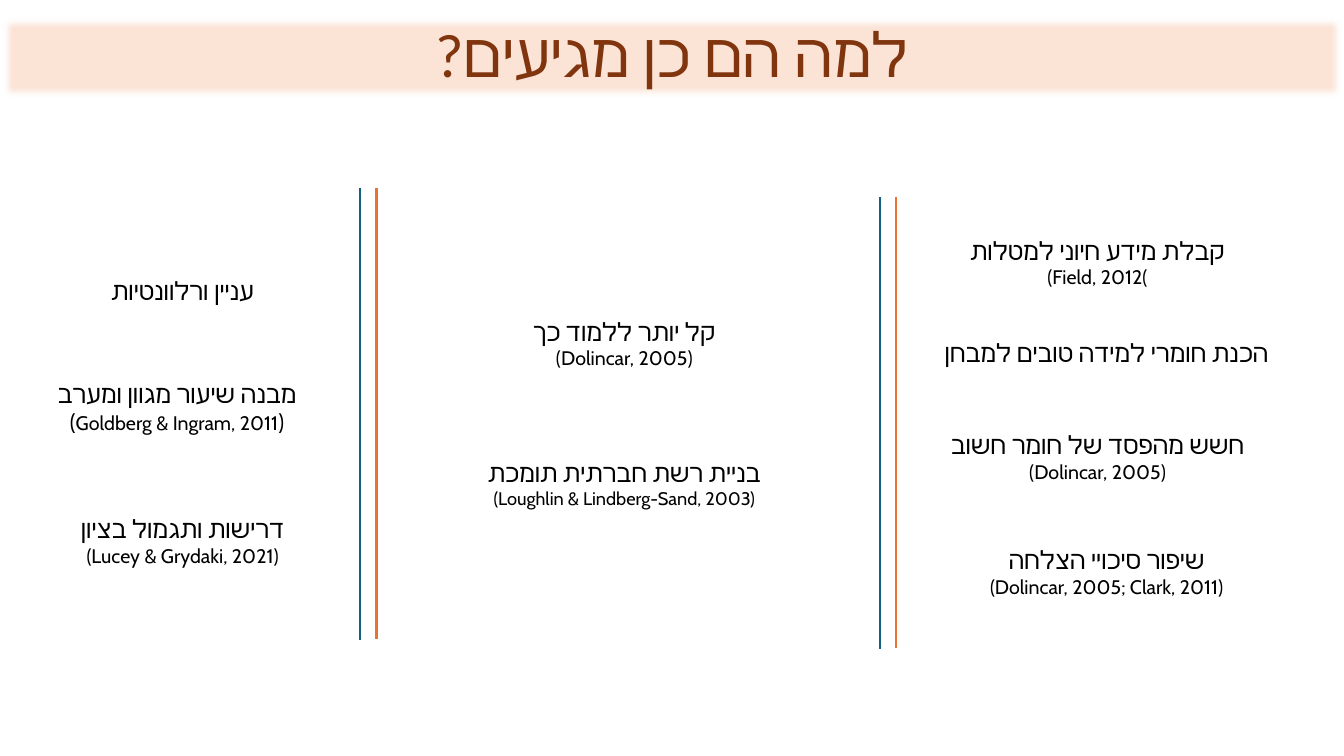
from lxml import etree
from pptx import Presentation
from pptx.dml.color import RGBColor
from pptx.enum.shapes import MSO_CONNECTOR, MSO_SHAPE
from pptx.enum.text import MSO_ANCHOR, PP_ALIGN
from pptx.oxml.ns import qn
from pptx.util import Pt

STRAIGHT = MSO_CONNECTOR.STRAIGHT
OVAL, RECTANGLE = MSO_SHAPE.OVAL, MSO_SHAPE.RECTANGLE
MIDDLE, CENTER = MSO_ANCHOR.MIDDLE, PP_ALIGN.CENTER

PEACH = RGBColor(0xFB, 0xE3, 0xD6)
BROWN = RGBColor(0x80, 0x35, 0x0E)
BLACK = RGBColor(0x00, 0x00, 0x00)
ORANGE = RGBColor(0xE9, 0x71, 0x32)
BLUE = RGBColor(0x15, 0x60, 0x82)

REASON_HEIGHT = 113
REASON_SIZE = 18
CITATION_SIZE = 14

# Each reason: horizontal shift from the column's centre, top, width,
# right-to-left flag, then one list of (text, size) runs per line
RIGHT_REASONS = [
    (0, 0, 304, False, [[("קבלת מידע חיוני למטלות", REASON_SIZE)],
                        [("(Field, 2012(", CITATION_SIZE)]]),
    (6.5, 65, 354, False, [[("הכנת חומרי למידה טובים למבחן", REASON_SIZE)]]),
    (0, 139, 333, True, [[("חשש מהפסד של חומר חשוב", REASON_SIZE)],
                         [("(Dolincar, 2005)", CITATION_SIZE)]]),
    (6.5, 221, 304, False, [[("שיפור סיכויי הצלחה", REASON_SIZE)],
                            [("(Dolincar, 2005; Clark, 2011)", CITATION_SIZE)]]),
]
MIDDLE_REASONS = [
    (0, 0, 354, True, [[("קל יותר ללמוד כך", REASON_SIZE)],
                       [("(Dolincar, 2005)", CITATION_SIZE)]]),
    (0, 100, 304, False, [[("בניית רשת חברתית תומכת", REASON_SIZE)],
                          [("(Loughlin & Lindberg-Sand, 2003)", 13)]]),
]
LEFT_REASONS = [
    (0, 0, 304, False, [[("עניין ורלוונטיות", REASON_SIZE)]]),
    (-4, 83, 304, False, [[("מבנה שיעור מגוון ומערב", REASON_SIZE)],
                          [("(", 16), ("Goldberg & Ingram, 2011", CITATION_SIZE),
                           (")", 16)]]),
    (0, 178.5, 304, False, [[("דרישות ותגמול בציון", REASON_SIZE)],
                            [("(Lucey & Grydaki, 2021)", CITATION_SIZE)]]),
]


def apply_format(target, values):
    for name, value in values.items():
        setattr(target, name, value)


def write_lines(shape, lines, font_name, color, rtl):
    """Write centred lines of runs into a shape."""
    frame = shape.text_frame
    apply_format(frame, {"word_wrap": False, "vertical_anchor": MIDDLE})
    for index, runs in enumerate(lines):
        paragraph = frame.add_paragraph() if index else frame.paragraphs[0]
        paragraph.alignment = CENTER
        if rtl:
            paragraph._p.get_or_add_pPr().set("rtl", "1")
        for text, size in runs:
            run = paragraph.add_run()
            run.text = text
            apply_format(run.font, {"name": font_name, "size": Pt(size)})
            run.font.color.rgb = color
            script_font = etree.SubElement(run.font._element, qn("a:cs"))
            script_font.set("typeface", font_name)


def add_title(slide, box, text):
    """Title on a band with soft edges."""
    band = slide.shapes.add_shape(RECTANGLE, *map(Pt, box))
    band.shadow.inherit = False
    band.fill.solid()
    band.fill.fore_color.rgb = PEACH
    band.line.fill.background()
    effects = band._element.spPr.find(qn("a:effectLst"))
    etree.SubElement(effects, qn("a:softEdge")).set("rad", str(Pt(5)))
    write_lines(band, [[(text, 44)]], "Calibri", BROWN, True)
    band.text_frame.paragraphs[0].line_spacing = 0.9


def add_column(slide, box, reasons):
    """Reasons centred on the column, each in an unfilled oval."""
    left, top, width = box
    for shift, offset, oval_width, rtl, lines in reasons:
        oval_left = left + (width - oval_width) / 2 + shift
        oval = slide.shapes.add_shape(OVAL, Pt(oval_left), Pt(top + offset),
                                      Pt(oval_width), Pt(REASON_HEIGHT))
        oval.shadow.inherit = False
        oval.fill.background()
        oval.line.fill.background()
        write_lines(oval, lines, "Cabin", BLACK, rtl)


def add_divider(slide, box):
    """Blue and orange lines on the two sides of the box."""
    left, top, width, height = box
    for x, y, color, weight in ((left + width, top - 0.5, ORANGE, 2),
                                (left, top, BLUE, 1.5)):
        rule = slide.shapes.add_connector(STRAIGHT, Pt(x), Pt(y),
                                          Pt(x), Pt(y + height))
        rule.line.color.rgb = color
        rule.line.width = Pt(weight)
        etree.SubElement(rule._element.spPr, qn("a:effectLst"))


def main():
    deck = Presentation()
    apply_format(deck, {"slide_width": Pt(960), "slide_height": Pt(540)})
    slide = deck.slides.add_slide(deck.slide_layouts[6])

    add_title(slide, (0, 10.8, 960, 60.5), "למה הם כן מגיעים?")
    add_column(slide, (632, 130.5, 304), RIGHT_REASONS)
    add_column(slide, (294, 188.5, 304), MIDDLE_REASONS)
    add_column(slide, (-21.5, 151, 304), LEFT_REASONS)
    add_divider(slide, (257, 134.5, 12, 322.5))
    add_divider(slide, (628.5, 141, 11.5, 322.5))

    deck.save("out.pptx")


if __name__ == "__main__":
    main()
